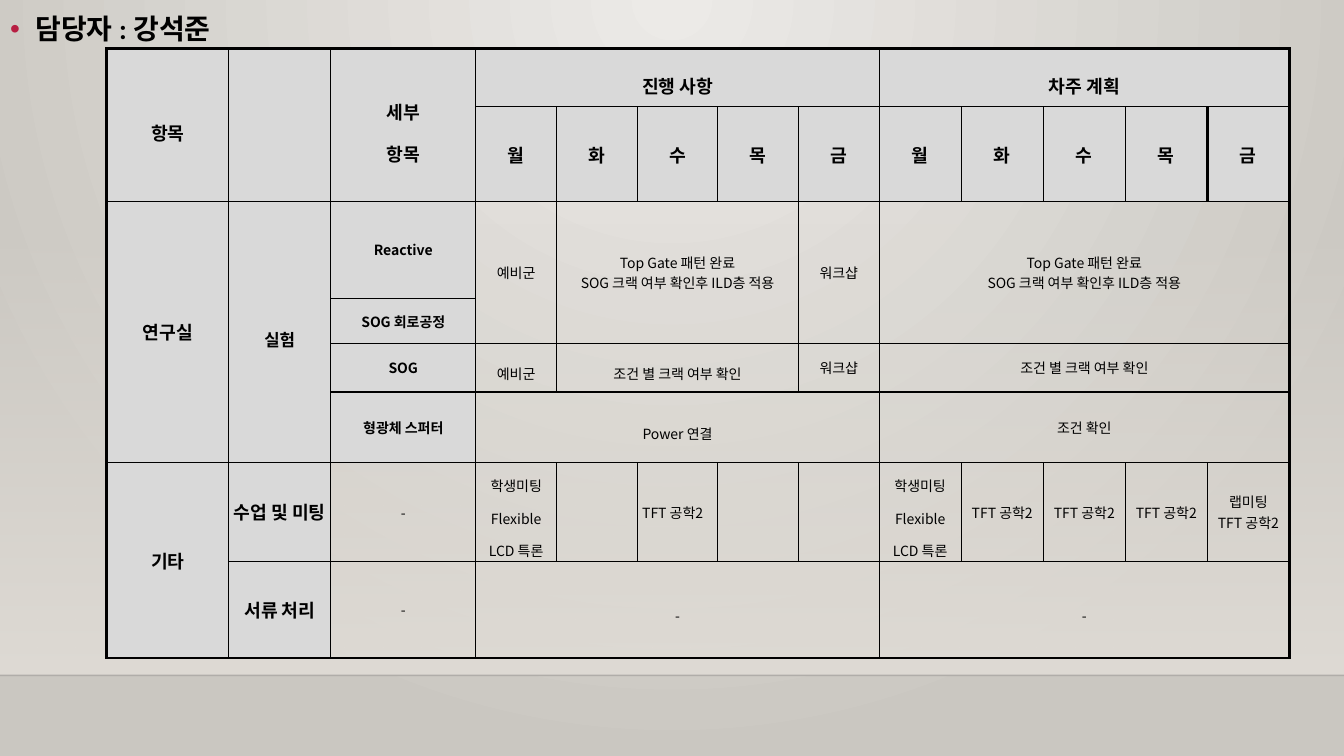
from dataclasses import dataclass

from pptx import Presentation
from pptx.dml.color import RGBColor
from pptx.enum.shapes import MSO_CONNECTOR, MSO_SHAPE
from pptx.enum.text import MSO_ANCHOR, MSO_AUTO_SIZE, PP_ALIGN
from pptx.oxml import parse_xml
from pptx.oxml.ns import nsdecls, qn
from pptx.util import Inches, Pt


@dataclass(frozen=True)
class Theme:
    ink: str = "000000"
    accent: str = "B71E42"
    label_fill: str = "D9D9D9"
    glow: str = "ECEAE7"
    backdrop: str = "CAC7C1"
    wall: str = "DFDBD5"
    horizon: str = "000001"
    title_font: str = "Calibri"
    table_font: str = "Noto Sans CJK KR"
    title_size: float = 20
    heading_size: float = 13
    group_size: float = 12
    body_size: float = 10
    thin: float = 1
    thick: float = 2.25


@dataclass(frozen=True)
class Box:
    left: float
    top: float
    width: float
    height: float

    def lengths(self):
        return [Inches(value) for value in (self.left, self.top, self.width, self.height)]


THEME = Theme()
PAGE = Box(0, 0, 13.33, 7.5)
NO_GRID_STYLE = "{2D5ABB26-0587-4C30-8999-92F81FD0307C}"
ROW_HEIGHTS = [0.58, 0.94, 0.96, 0.45, 0.48, 0.7, 0.96, 0.96]
LABEL_WIDTHS = [1.21, 1.01, 1.44]
PROGRESS_DAY_WIDTH = 0.8
DAYS = "월화수목금"
PROGRESS, PLAN = 3, 8

HEADING = dict(size=THEME.heading_size, bold=True, fill=THEME.label_fill)
GROUP = dict(HEADING, size=THEME.group_size)
LABEL = dict(HEADING, size=THEME.body_size)
BODY = dict(size=THEME.body_size)
LOOSE = dict(spacing=1.6)

GATE = "Top Gate 패턴 완료\nSOG 크랙 여부 확인후 ILD층 적용"
CRACK = "조건 별 크랙 여부 확인"
MEETING = "학생미팅\nFlexible LCD 특론"
CLASS = "TFT 공학2"

# row, column, rows spanned, columns spanned, text, format
BLOCKS = [
    (0, 0, 2, 1, "항목", HEADING | LOOSE),
    (0, 1, 2, 1, "", HEADING),
    (0, 2, 2, 1, "세부\n항목", HEADING | LOOSE),
    (0, PROGRESS, 1, 5, "진행 사항", HEADING | LOOSE),
    (0, PLAN, 1, 5, "차주 계획", HEADING | LOOSE),
    *[(1, start + offset, 1, 1, day, HEADING)
      for start in (PROGRESS, PLAN) for offset, day in enumerate(DAYS)],
    (2, 0, 4, 1, "연구실", HEADING),
    (2, 1, 4, 1, "실험", GROUP | LOOSE),
    *[(2 + offset, 2, 1, 1, name, LABEL)
      for offset, name in enumerate(["Reactive", "SOG 회로공정", "SOG", "형광체 스퍼터"])],
    (2, 3, 2, 1, "예비군", BODY),
    (2, 4, 2, 3, GATE, BODY),
    (2, 7, 2, 1, "워크샵", BODY),
    (2, PLAN, 2, 5, GATE, BODY),
    (4, 3, 1, 1, "예비군", BODY | LOOSE),
    (4, 4, 1, 3, CRACK, BODY | LOOSE),
    (4, 7, 1, 1, "워크샵", BODY),
    (4, PLAN, 1, 5, CRACK, BODY),
    (5, PROGRESS, 1, 5, "Power 연결", BODY | LOOSE),
    (5, PLAN, 1, 5, "조건 확인", BODY),
    (6, 0, 2, 1, "기타", HEADING),
    (6, 1, 1, 1, "수업 및 미팅", HEADING),
    (6, 2, 1, 1, "-", BODY),
    (6, 3, 1, 1, MEETING, BODY | LOOSE),
    (6, 4, 1, 1, "", BODY),
    (6, 5, 1, 1, CLASS, BODY | dict(align=PP_ALIGN.LEFT)),
    (6, 6, 1, 1, "", BODY),
    (6, 7, 1, 1, "", BODY),
    (6, PLAN, 1, 1, MEETING, BODY | LOOSE),
    *[(6, column, 1, 1, CLASS, BODY) for column in (9, 10, 11)],
    (6, 12, 1, 1, "랩미팅\n" + CLASS, BODY),
    (7, 1, 1, 1, "서류 처리", HEADING),
    (7, 2, 1, 1, "-", BODY),
    (7, PROGRESS, 1, 5, "-", BODY | LOOSE),
    (7, PLAN, 1, 5, "-", BODY | LOOSE),
]


def write_text(frame, text, *, size, bold=False, font=THEME.table_font,
               align=PP_ALIGN.CENTER, spacing=1.0):
    for index, line in enumerate(text.split("\n")):
        para = frame.paragraphs[0] if index == 0 else frame.add_paragraph()
        para.alignment = align
        para.line_spacing = spacing
        para.space_before = para.space_after = Pt(0)
        if not line:
            continue
        span = para.add_run()
        span.text = line
        span.font.size = Pt(size)
        span.font.bold = bold
        span.font.name = font
        span.font.color.rgb = RGBColor.from_string(THEME.ink)
        east_asian = parse_xml(f'<a:ea {nsdecls("a")} typeface="{THEME.table_font}"/>')
        span.font._element.find(qn("a:latin")).addnext(east_asian)


def set_alpha(color_parent, percent):
    color = color_parent.find(".//" + qn("a:srgbClr"))
    color.append(parse_xml(f'<a:alpha {nsdecls("a")} val="{percent * 1000}"/>'))


def set_gradient(fill, first, last):
    fill.gradient()
    for stop, position, color in zip(fill.gradient_stops, (0, 1), (first, last)):
        stop.position = position
        stop.color.rgb = RGBColor.from_string(color)


def draw_backdrop(page, box):
    """Radial page background, fading wall and the horizon line below it."""
    fill = page.background.fill
    set_gradient(fill, THEME.glow, THEME.backdrop)
    linear = page._element.find(".//" + qn("a:lin"))
    linear.getparent().replace(linear, parse_xml(
        f'<a:path {nsdecls("a")} path="circle">'
        '<a:fillToRect l="43000" t="0" r="43000" b="100000"/></a:path>'))

    wall_box = Box(box.left, box.top + 2.21, box.width, 4.49)
    wall = page.shapes.add_shape(MSO_SHAPE.RECTANGLE, *wall_box.lengths())
    wall.shadow.inherit = False
    wall.line.fill.background()
    set_gradient(wall.fill, THEME.wall, THEME.wall)
    wall.fill.gradient_angle = 270
    set_alpha(wall._element.find(".//" + qn("a:gs")), 0)

    level = Inches(wall_box.top + wall_box.height)
    horizon = page.shapes.add_connector(
        MSO_CONNECTOR.STRAIGHT, Inches(box.left), level, Inches(box.left + box.width), level)
    horizon.line.width = Pt(THEME.thin)
    horizon.line.color.rgb = RGBColor.from_string(THEME.horizon)
    properties = horizon._element.spPr
    set_alpha(properties, 20)
    properties.append(parse_xml(f'<a:effectLst {nsdecls("a")}/>'))


def place_title(page, box):
    title = page.shapes.title
    title.left, title.top, title.width, title.height = box.lengths()
    frame = title.text_frame
    frame.word_wrap = True
    frame.auto_size = MSO_AUTO_SIZE.NONE
    frame.vertical_anchor = MSO_ANCHOR.TOP
    properties = frame.paragraphs[0]._p.get_or_add_pPr()
    properties.set("marL", str(Inches(0.25)))
    properties.set("indent", str(Inches(-0.25)))
    for bullet in (f'<a:buClr {nsdecls("a")}><a:srgbClr val="{THEME.accent}"/></a:buClr>',
                   f'<a:buFont {nsdecls("a")} typeface="Arial"/>',
                   f'<a:buChar {nsdecls("a")} char="•"/>'):
        properties.append(parse_xml(bullet))
    write_text(frame, "담당자 : 강석준", size=THEME.title_size, bold=True,
               font=THEME.title_font, align=PP_ALIGN.LEFT, spacing=1.2)


def set_borders(cell, widths):
    properties = cell._tc.get_or_add_tcPr()
    for side in "LRTB":
        if side in widths:
            properties.append(parse_xml(
                f'<a:ln{side} {nsdecls("a")} w="{Pt(widths[side])}"><a:solidFill>'
                f'<a:srgbClr val="{THEME.ink}"/></a:solidFill></a:ln{side}>'))


def fill_block(table, row, column, rows, columns, text, fill=None, **text_format):
    """Merge one block of cells, rule its outer edges and write its text."""
    bottom, right = row + rows, column + columns
    origin = table.cell(row, column)
    if rows * columns > 1:
        origin.merge(table.cell(bottom - 1, right - 1))

    friday_plan = len(table.columns) - 1
    heavy = {"L": column == 0 or (row, column) == (1, friday_plan),
             "R": right > friday_plan or (row, right) == (1, friday_plan),
             "T": row == 0,
             "B": bottom == len(table.rows)}
    widths = {side: THEME.thick if thick else THEME.thin for side, thick in heavy.items()}
    for y in range(row, bottom):
        for x in range(column, right):
            on_edge = {"L": x == column, "R": x == right - 1,
                       "T": y == row, "B": y == bottom - 1}
            is_origin = (y, x) == (row, column)
            set_borders(table.cell(y, x), {side: width for side, width in widths.items()
                                           if is_origin or on_edge[side]})

    if fill:
        origin.fill.solid()
        origin.fill.fore_color.rgb = RGBColor.from_string(fill)
    else:
        origin.fill.background()
    origin.vertical_anchor = MSO_ANCHOR.MIDDLE
    origin.margin_left = origin.margin_right = Inches(0.05)
    origin.margin_top = origin.margin_bottom = Inches(0.01)
    write_text(origin.text_frame, text, **text_format)


def draw_schedule(page, box):
    fixed_widths = LABEL_WIDTHS + [PROGRESS_DAY_WIDTH] * len(DAYS)
    plan_day_width = (box.width - sum(fixed_widths)) / len(DAYS)
    widths = fixed_widths + [plan_day_width] * len(DAYS)
    table = page.shapes.add_table(len(ROW_HEIGHTS), len(widths), *box.lengths()).table
    table.first_row = table.horz_banding = False
    table._tbl.tblPr.find(qn("a:tableStyleId")).text = NO_GRID_STYLE
    for column, width in zip(table.columns, widths):
        column.width = Inches(width)
    for row, height in zip(table.rows, ROW_HEIGHTS):
        row.height = Inches(height)
    for *place, text, text_format in BLOCKS:
        fill_block(table, *place, text, **text_format)


def main():
    deck = Presentation()
    deck.slide_width, deck.slide_height = Inches(PAGE.width), Inches(PAGE.height)
    page = deck.slides.add_slide(deck.slide_layouts.get_by_name("Title Only"))
    draw_backdrop(page, PAGE)
    place_title(page, Box(0, 0, 3.54, 0.47))
    draw_schedule(page, Box(1.06, 0.48, 11.73, sum(ROW_HEIGHTS)))
    deck.save("out.pptx")


if __name__ == "__main__":
    main()
